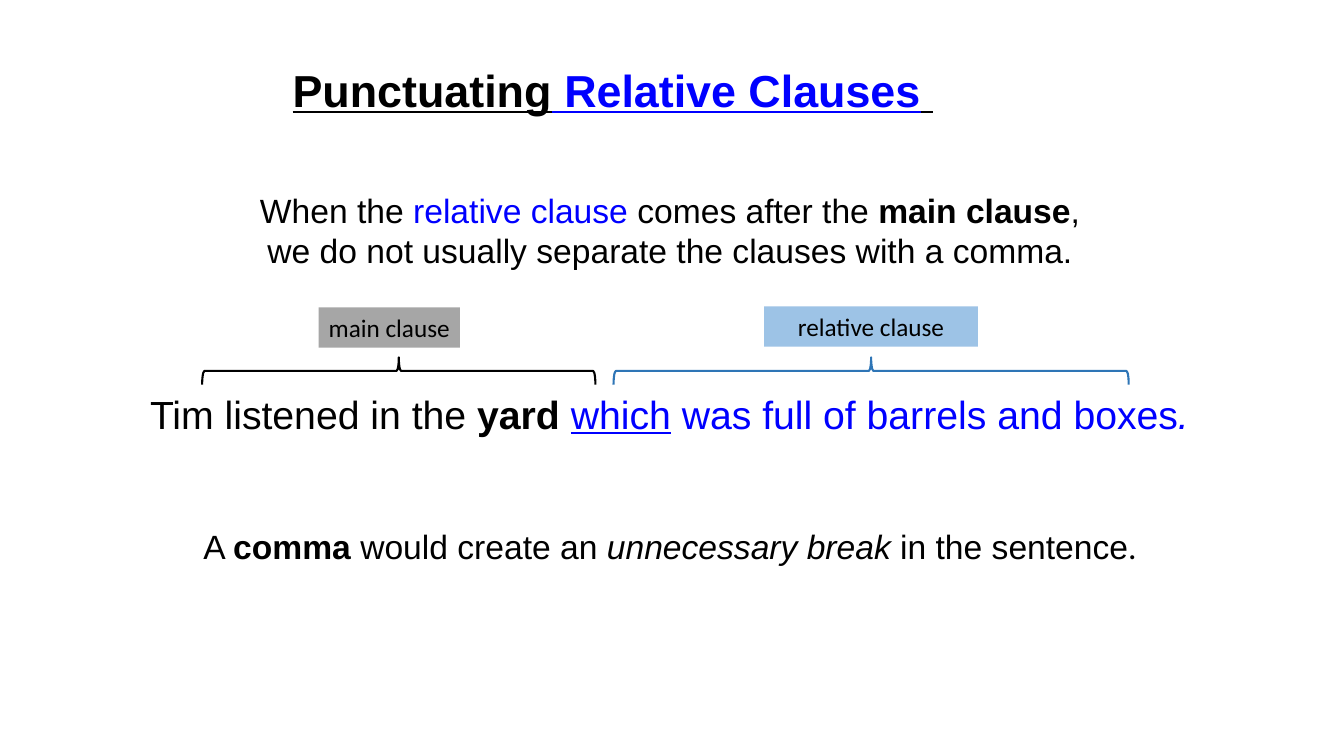
from pptx import Presentation
from pptx.dml.color import RGBColor
from pptx.enum.shapes import MSO_SHAPE
from pptx.enum.text import MSO_ANCHOR, MSO_AUTO_SIZE, PP_ALIGN
from pptx.util import Inches, Pt

BLACK = RGBColor(0x00, 0x00, 0x00)
BLUE = RGBColor(0x00, 0x00, 0xFF)
BRACE_BLUE = RGBColor(0x2E, 0x75, 0xB6)
LABEL_GREY = RGBColor(0xA6, 0xA6, 0xA6)
LABEL_BLUE = RGBColor(0x9D, 0xC3, 0xE6)


class GrammarSlide:
    """Builds a grammar slide; lengths are percentages of the slide's size."""

    body_font = "Arial"
    label_font = "Calibri"

    def __init__(self, deck):
        self.width, self.height = deck.slide_width, deck.slide_height
        self.slide = deck.slides.add_slide(deck.slide_layouts[5])

    def box(self, left, top, width, height):
        return (int(self.width * left / 100), int(self.height * top / 100),
                int(self.width * width / 100), int(self.height * height / 100))

    def set_lines(self, frame, lines, size, font):
        for number, line in enumerate(lines):
            paragraph = frame.add_paragraph() if number else frame.paragraphs[0]
            paragraph.alignment = PP_ALIGN.CENTER
            for words, style in line:
                run = paragraph.add_run()
                run.text = words
                run.font.size = Pt(size)
                run.font.name = style.get("font", font)
                run.font.color.rgb = style.get("color", BLACK)
                run.font.bold = style.get("bold", False)
                run.font.italic = style.get("italic", False)
                run.font.underline = style.get("underline", False)

    def title(self, area, line, size):
        heading = self.slide.shapes.title
        heading.left, heading.top, heading.width, heading.height = self.box(*area)
        frame = heading.text_frame
        frame.auto_size = MSO_AUTO_SIZE.NONE
        frame.vertical_anchor = MSO_ANCHOR.TOP
        self.set_lines(frame, [line], size, self.body_font)

    def text(self, area, lines, size, wrap=True):
        frame = self.slide.shapes.add_textbox(*self.box(*area)).text_frame
        frame.word_wrap = wrap
        self.set_lines(frame, lines, size, self.body_font)

    def label(self, area, words, fill):
        tag = self.slide.shapes.add_shape(MSO_SHAPE.RECTANGLE, *self.box(*area))
        tag.shadow.inherit = False
        tag.fill.solid()
        tag.fill.fore_color.rgb = fill
        tag.line.fill.background()
        tag.text_frame.word_wrap = False
        self.set_lines(tag.text_frame, [[(words, {})]], 18, self.label_font)

    def brace(self, area, color):
        left, top, span, depth = self.box(*area)
        brace = self.slide.shapes.add_shape(
            MSO_SHAPE.LEFT_BRACE, left + (span - depth) // 2,
            top - (span - depth) // 2, depth, span)
        brace.rotation = 90
        brace.shadow.inherit = False
        brace.fill.background()
        brace.line.color.rgb = color
        brace.line.width = Pt(1.5)


def main():
    deck = Presentation()
    deck.slide_width, deck.slide_height = Inches(13.33), Inches(7.5)
    lesson = GrammarSlide(deck)
    plain, bold, italic, blue = {}, {"bold": True}, {"italic": True}, {"color": BLUE}
    heading = {"bold": True, "underline": True}

    lesson.title((2.25, 7.6, 86.72, 8.53), [
        ("Punctuating", heading),
        (" Relative Clauses", heading | blue),
        (" ", heading)], 32)
    lesson.text((11.4, 24.4, 76.9, 18.4), [
        [("When the ", plain), ("relative clause ", blue),
         ("comes after the ", plain), ("main clause", bold), (",", plain)],
        [("we do not usually separate the clauses with a comma.", plain)]], 24)
    lesson.text((9.9, 50.93, 79.82, 7.6), [
        [("Tim listened in the ", plain), ("yard ", bold),
         ("which", blue | {"underline": True}),
         (" was full of barrels and boxes", blue), (".", blue | italic)]],
        28, wrap=False)
    lesson.brace((15.04, 47.27, 29.26, 3.6), BLACK)
    lesson.label((23.71, 40.67, 10.5, 5.33), "main clause", LABEL_GREY)
    lesson.brace((45.65, 47.27, 38.33, 3.6), BRACE_BLUE)
    lesson.label((56.86, 40.53, 15.9, 5.33), "relative clause", LABEL_BLUE)
    lesson.text((11.4, 68.93, 76.9, 6.67), [
        [("A ", plain), ("comma", bold), (" would create an ", plain),
         ("unnecessary break ", italic), ("in the sentence", plain),
         (".", {"font": lesson.label_font})]], 24)
    deck.save("out.pptx")


if __name__ == "__main__":
    main()
